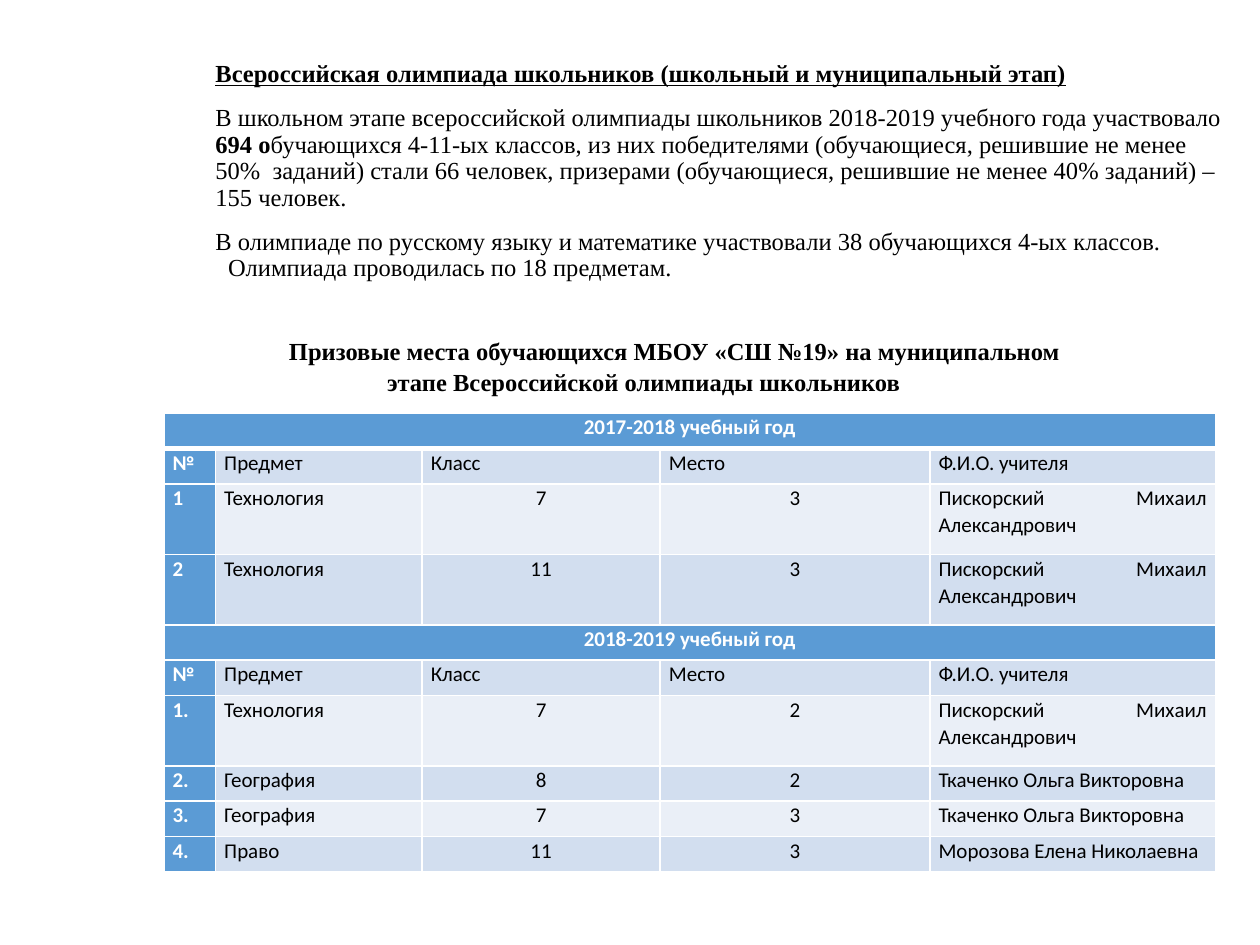
"""Build the school olympiad results slide with its prize table."""
from lxml import etree
from pptx import Presentation
from pptx import util as u
from pptx.dml.color import RGBColor
from pptx.enum import text
from pptx.oxml import ns

THEME = {
    "ink": RGBColor.from_string("000000"),
    "white": RGBColor.from_string("FFFFFF"),
    "header": RGBColor.from_string("5B9BD5"),
    "bands": [RGBColor.from_string("D2DEEF"), RGBColor.from_string("EAEFF7")],
    "prose": {"name": "Times New Roman", "size": u.Pt(14)},
    "grid": {"name": "Calibri", "size": u.Pt(12)},
}
ALIGN = text.PP_ALIGN


def write_spans(para, spans, font, color, layout):
    for name, value in layout.items():
        setattr(para, name, value)
    for words, extra in spans:
        span = para.add_run()
        span.text = words
        for name, value in {**font, "bold": False, **extra}.items():
            setattr(span.font, name, value)
        span.font.color.rgb = color


def add_borders(cell, widths):
    properties = cell._tc.get_or_add_tcPr()
    for side, width in widths.items():
        line = etree.SubElement(properties, ns.qn(f"a:ln{side}"), w=str(u.Pt(width)))
        fill = etree.SubElement(line, ns.qn("a:solidFill"))
        etree.SubElement(fill, ns.qn("a:srgbClr"), val=str(THEME["white"]))


deck = Presentation()
deck.slide_width, deck.slide_height = u.Inches(10), u.Inches(7.5)
page = deck.slides.add_slide(deck.slide_layouts[1])
title = page.shapes.title
title.element.getparent().remove(title.element)

body = page.placeholders[1]
body_place = {"left": 1.61, "top": 0.44, "width": 8.19, "height": 6.46}
for name, value in body_place.items():
    setattr(body, name, u.Inches(value))
frame = body.text_frame
frame.auto_size = text.MSO_AUTO_SIZE.NONE
frame.vertical_anchor = text.MSO_ANCHOR.TOP

paragraphs = [
    (0, 0, [("Всероссийская олимпиада школьников (школьный и муниципальный этап)",
             {"bold": True, "underline": True})]),
    (10, 0, [
        ("В школьном этапе всероссийской олимпиады школьников 2018-2019 учебного года участвовало ", {}),
        ("694 о", {"bold": True}),
        ("бучающихся 4-11-ых классов, из них победителями (обучающиеся, решившие не менее "
         "50%  заданий) стали 66 человек, призерами (обучающиеся, решившие не менее 40% "
         "заданий) – 155 человек.", {}),
    ]),
    (10, 0, [("В олимпиаде по русскому языку и математике участвовали 38 обучающихся 4-ых классов.", {})]),
    (0, 0.1, [("Олимпиада проводилась по 18 предметам.", {})]),
]
for index, (gap, indent, spans) in enumerate(paragraphs):
    para = frame.add_paragraph() if index else frame.paragraphs[0]
    settings = para._p.get_or_add_pPr()
    settings.set("marL", "0")
    settings.set("indent", str(u.Inches(indent)))
    etree.SubElement(settings, ns.qn("a:buNone"))
    layout = {"line_spacing": 0.9, "space_before": u.Pt(gap), "alignment": ALIGN.LEFT}
    write_spans(para, spans, THEME["prose"], THEME["ink"], layout)

caption = page.shapes.add_textbox(u.Inches(1.46), u.Inches(2.6), u.Inches(7.3), u.Inches(0.96))
caption.text_frame.word_wrap = True
para = caption.text_frame.paragraphs[0]
para._p.get_or_add_pPr().set("indent", str(u.Inches(0.49)))
write_spans(
    para,
    [("Призовые места обучающихся МБОУ «СШ №19» на муниципальном этапе "
      "Всероссийской олимпиады школьников", {"bold": True})],
    THEME["prose"], THEME["ink"],
    {"line_spacing": 1.07, "space_after": u.Pt(8), "alignment": ALIGN.CENTER},
)

labels = ["№", "Предмет", "Класс", "Место", "Ф.И.О. учителя"]
craft_teacher = "Пискорский Михаил Александрович"
years = [
    ("2017-2018 учебный год", [
        ["1", "Технология", "7", "3", craft_teacher],
        ["2", "Технология", "11", "3", craft_teacher],
    ]),
    ("2018-2019 учебный год", [
        ["1.", "Технология", "7", "2", craft_teacher],
        ["2.", "География", "8", "2", "Ткаченко Ольга Викторовна"],
        ["3.", "География", "7", "3", "Ткаченко Ольга Викторовна"],
        ["4.", "Право", "11", "3", "Морозова Елена Николаевна"],
    ]),
]
rows = []
for year, winners in years:
    rows += [[year], labels, *winners]

widths = [0.41, 1.64, 1.89, 2.14, 2.27]
table = page.shapes.add_table(
    len(rows), len(widths), u.Inches(1.3), u.Inches(3.28), u.Inches(sum(widths)), u.Inches(3.62)
).table
table.first_row = table.horz_banding = False
for column, width in zip(table.columns, widths):
    column.width = u.Inches(width)

cell_format = {"margin_left": u.Inches(0.07), "margin_right": u.Inches(0.07),
               "margin_top": 0, "margin_bottom": 0}
for row_index, values in enumerate(rows):
    is_year = len(values) == 1
    if is_year:
        band = 0
    table.rows[row_index].height = u.Inches(0.56 if craft_teacher in values else 0.28)
    for column_index in range(len(widths)):
        cell = table.cell(row_index, column_index)
        is_header = is_year or column_index == 0
        add_borders(cell, {"L": 1, "R": 1, "T": 3 if row_index == 1 else 1,
                           "B": 3 if row_index == 0 else 1})
        cell.fill.solid()
        cell.fill.fore_color.rgb = THEME["header"] if is_header else THEME["bands"][band % 2]
        for name, value in cell_format.items():
            setattr(cell, name, value)
        if column_index < len(values):
            is_number = column_index in (2, 3) and values is not labels
            write_spans(
                cell.text_frame.paragraphs[0],
                [(values[column_index], {"bold": is_header})],
                THEME["grid"], THEME["white"] if is_header else THEME["ink"],
                {"line_spacing": 1.07,
                 "alignment": ALIGN.CENTER if is_year or is_number else ALIGN.JUSTIFY},
            )
    if is_year:
        table.cell(row_index, 0).merge(table.cell(row_index, len(widths) - 1))
    else:
        band += 1

deck.save("out.pptx")
